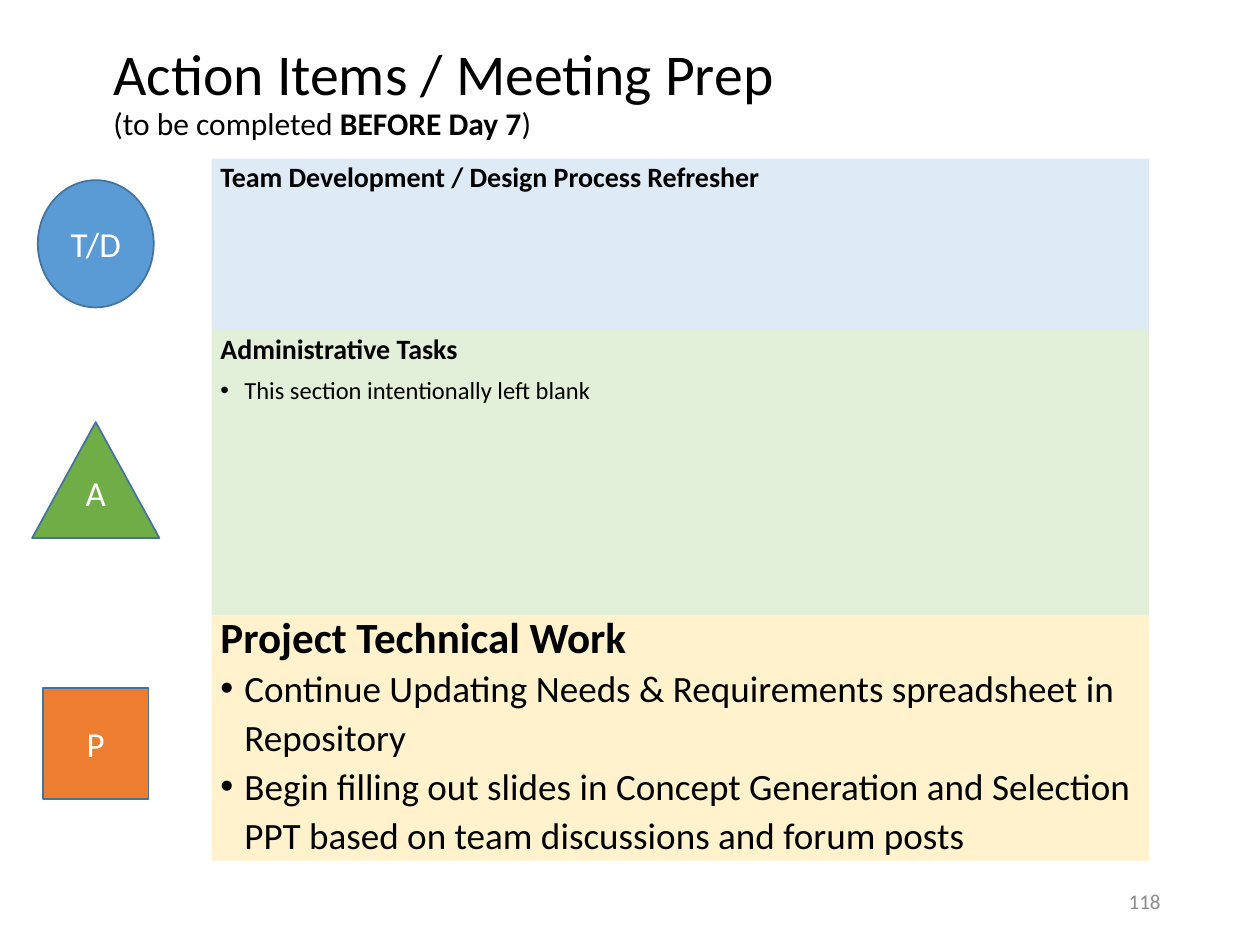
from dataclasses import dataclass

from lxml.etree import SubElement
from pptx import Presentation
from pptx.dml.color import RGBColor
from pptx.enum.shapes import MSO_SHAPE
from pptx.enum.text import MSO_ANCHOR, MSO_AUTO_SIZE, PP_ALIGN
from pptx.oxml.ns import qn
from pptx.util import Inches, Pt

COLUMNS, ROWS = 100, 75
FONT = "Calibri"
BLACK = RGBColor(0x00, 0x00, 0x00)
WHITE = RGBColor(0xFF, 0xFF, 0xFF)
GRAY = RGBColor(0x8C, 0x8C, 0x8C)
OUTLINE = RGBColor(0x43, 0x73, 0x9E)
BLUE, PALE_BLUE = RGBColor(0x5B, 0x9B, 0xD5), RGBColor(0xDE, 0xEB, 0xF7)
GREEN, PALE_GREEN = RGBColor(0x70, 0xAD, 0x47), RGBColor(0xE2, 0xF0, 0xD9)
ORANGE, PALE_YELLOW = RGBColor(0xED, 0x7D, 0x31), RGBColor(0xFF, 0xF2, 0xCC)

PANELS_LEFT, PANELS_TOP, PANELS_WIDTH = 16.8, 12.6, 74.4
MARKER_CENTER = 7.6
HANGING = Inches(0.19)


@dataclass(frozen=True)
class Marker:
    label: str
    kind: MSO_SHAPE
    color: RGBColor
    top: float
    width: float
    height: float
    bottom_inset: float = 0.04


@dataclass(frozen=True)
class Section:
    heading: str
    tasks: tuple[str, ...]
    color: RGBColor
    rows: float
    marker: Marker
    heading_size: float = 16
    heading_spacing: float = 0.9
    task_size: float = 14
    task_spacing: float = 0.9
    task_gap: float = 7.5


SECTIONS = (
    Section("Team Development / Design Process Refresher", (), PALE_BLUE, 13.6,
            Marker("T/D", MSO_SHAPE.OVAL, BLUE, 14.3, 9.2, 10.1)),
    Section("Administrative Tasks", ("This section intentionally left blank",),
            PALE_GREEN, 22.6,
            Marker("A", MSO_SHAPE.ISOSCELES_TRIANGLE, GREEN, 33.5, 10.1, 9.2, 0.31)),
    Section("Project Technical Work",
            ("Continue Updating Needs & Requirements spreadsheet in Repository",
             "Begin filling out slides in Concept Generation and Selection PPT "
             "based on team discussions and forum posts"),
            PALE_YELLOW, 19.5,
            Marker("P", MSO_SHAPE.RECTANGLE, ORANGE, 54.6, 8.4, 8.8),
            24.6, 0.8, 21.2, 1.1, 0),
)

deck = Presentation()
deck.slide_width, deck.slide_height = Inches(10), Inches(7.5)
slide = deck.slides.add_slide(deck.slide_layouts[5])


def grid(left: float, top: float, width: float, height: float) -> tuple[int, ...]:
    column, row = deck.slide_width / COLUMNS, deck.slide_height / ROWS
    return tuple(round(n) for n in (left * column, top * row, width * column, height * row))


def style(paragraph, size: float, color: RGBColor, align=PP_ALIGN.LEFT, bold=False) -> None:
    paragraph.alignment = align
    font = paragraph.font
    font.name, font.size, font.bold = FONT, Pt(size), bold
    font.color.rgb = color


def add_bullet(paragraph) -> None:
    properties = paragraph._p.get_or_add_pPr()
    properties.set("marL", str(HANGING))
    properties.set("indent", str(-HANGING))
    SubElement(properties, qn("a:buFont")).set("typeface", "Arial")
    SubElement(properties, qn("a:buChar")).set("char", "•")


def add_filled(kind: MSO_SHAPE, place: tuple[int, ...], color: RGBColor,
               bottom_inset: float = 0.04):
    filled = slide.shapes.add_shape(kind, *place)
    filled.shadow.inherit = False
    filled.fill.solid()
    filled.fill.fore_color.rgb = color
    frame = filled.text_frame
    frame.word_wrap = True
    frame.margin_left = frame.margin_right = Inches(0.07)
    frame.margin_top, frame.margin_bottom = Inches(0.04), Inches(bottom_inset)
    return filled


def draw_panel(section: Section, top: float) -> None:
    panel = add_filled(MSO_SHAPE.RECTANGLE,
                       grid(PANELS_LEFT, top, PANELS_WIDTH, section.rows), section.color)
    panel.line.fill.background()
    frame = panel.text_frame
    frame.vertical_anchor = MSO_ANCHOR.TOP
    heading = frame.paragraphs[0]
    heading.text = section.heading
    heading.line_spacing, heading.space_before = section.heading_spacing, Pt(7.5)
    style(heading, section.heading_size, BLACK, bold=True)
    for words in section.tasks:
        task = frame.add_paragraph()
        task.text = words
        task.line_spacing, task.space_before = section.task_spacing, Pt(section.task_gap)
        add_bullet(task)
        style(task, section.task_size, BLACK)


def draw_marker(marker: Marker) -> None:
    left = MARKER_CENTER - marker.width / 2
    badge = add_filled(marker.kind, grid(left, marker.top, marker.width, marker.height),
                       marker.color, marker.bottom_inset)
    badge.line.color.rgb, badge.line.width = OUTLINE, Pt(1)
    badge.text_frame.vertical_anchor = MSO_ANCHOR.MIDDLE
    label = badge.text_frame.paragraphs[0]
    label.text = marker.label
    style(label, 20, WHITE, PP_ALIGN.CENTER)


def draw_title() -> None:
    title = slide.shapes.title
    title.left, title.top, title.width, title.height = grid(8, 2.6, 86.2, 9.7)
    title.text_frame.auto_size = MSO_AUTO_SIZE.NONE
    title.text_frame.vertical_anchor = MSO_ANCHOR.MIDDLE
    heading = title.text_frame.paragraphs[0]
    heading.line_spacing = 0.9
    style(heading, 18, BLACK)
    main = heading.add_run()
    main.text, main.font.size = "Action Items / Meeting Prep", Pt(33)
    heading.add_line_break()
    for words, bold in (("(to be completed ", False), ("BEFORE Day 7", True), (")", False)):
        deadline = heading.add_run()
        deadline.text, deadline.font.bold = words, bold


def draw_page_number() -> None:
    frame = slide.shapes.add_textbox(*grid(70.6, 69.5, 22.5, 4)).text_frame
    frame.word_wrap = True
    frame.vertical_anchor = MSO_ANCHOR.MIDDLE
    number = frame.paragraphs[0]
    number.text = "118"
    style(number, 12, GRAY, PP_ALIGN.RIGHT)


def main() -> None:
    draw_title()
    top = PANELS_TOP
    for section in SECTIONS:
        draw_panel(section, top)
        draw_marker(section.marker)
        top += section.rows
    draw_page_number()
    deck.save("out.pptx")


if __name__ == "__main__":
    main()
